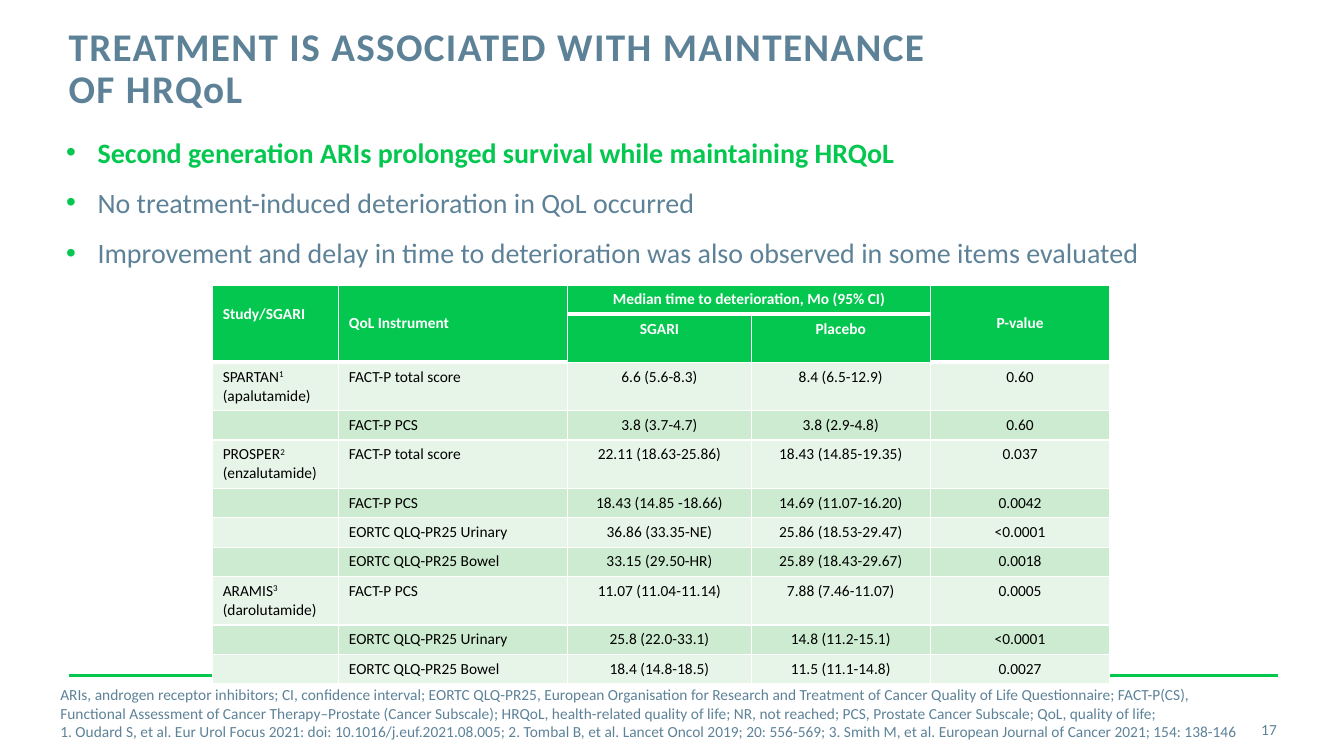
from lxml.etree import SubElement
from pptx import Presentation
from pptx.dml.color import RGBColor
from pptx.enum.shapes import MSO_CONNECTOR
from pptx.enum.text import MSO_ANCHOR, MSO_AUTO_SIZE, PP_ALIGN
from pptx.oxml.ns import qn
from pptx.util import Cm, Pt

COLORS = {
    "green": "03C74F",
    "slate": "5D8298",
    "white": "FFFFFF",
    "black": "000000",
    "light": "E7F5E9",
    "mid": "CCEBD0",
}
TITLE = ["TREATMENT IS ASSOCIATED WITH MAINTENANCE", "OF HRQoL"]
BULLETS = [
    ("Second generation ARIs prolonged survival while maintaining HRQoL", "green", True),
    ("No treatment-induced deterioration in QoL occurred", "slate", False),
    ("Improvement and delay in time to deterioration was also observed in some items evaluated",
     "slate", False),
]
NOTES = [
    "ARIs, androgen receptor inhibitors; CI, confidence interval; EORTC QLQ-PR25, European "
    "Organisation for Research and Treatment of Cancer Quality of Life Questionnaire; FACT-P(CS), "
    "Functional Assessment of Cancer Therapy–Prostate (Cancer Subscale); HRQoL, health-related "
    "quality of life; NR, not reached; PCS, Prostate Cancer Subscale; QoL, quality of life;",
    "1. Oudard S, et al. Eur Urol Focus 2021: doi: 10.1016/j.euf.2021.08.005; 2. Tombal B, et al. "
    "Lancet Oncol 2019; 20: 556-569; 3. Smith M, et al. European Journal of Cancer 2021; "
    "154: 138-146",
]
HEADER = [
    ["Study/SGARI", "QoL Instrument", "Median time to deterioration, Mo (95% CI)", "", "P-value"],
    ["", "", "SGARI", "Placebo", ""],
]
STUDIES = [
    ("SPARTAN", "1", "(apalutamide)", [
        ("FACT-P total score", "6.6 (5.6-8.3)", "8.4 (6.5-12.9)", "0.60"),
        ("FACT-P PCS", "3.8 (3.7-4.7)", "3.8 (2.9-4.8)", "0.60"),
    ]),
    ("PROSPER", "2", "(enzalutamide)", [
        ("FACT-P total score", "22.11 (18.63-25.86)", "18.43 (14.85-19.35)", "0.037"),
        ("FACT-P PCS", "18.43 (14.85 -18.66)", "14.69 (11.07-16.20)", "0.0042"),
        ("EORTC QLQ-PR25 Urinary", "36.86 (33.35-NE)", "25.86 (18.53-29.47)", "<0.0001"),
        ("EORTC QLQ-PR25 Bowel", "33.15 (29.50-HR)", "25.89 (18.43-29.67)", "0.0018"),
    ]),
    ("ARAMIS", "3", "(darolutamide)", [
        ("FACT-P PCS", "11.07 (11.04-11.14)", "7.88 (7.46-11.07)", "0.0005"),
        ("EORTC QLQ-PR25 Urinary", "25.8 (22.0-33.1)", "14.8 (11.2-15.1)", "<0.0001"),
        ("EORTC QLQ-PR25 Bowel", "18.4 (14.8-18.5)", "11.5 (11.1-14.8)", "0.0027"),
    ]),
]
COL_WIDTHS = [3.18, 5.77, 4.62, 4.52, 4.52]
ROW_HEIGHT, STUDY_ROW_HEIGHT, SUBHEAD_HEIGHT = 0.74, 1.22, 1.2


def set_all(target, **values):
    for name, value in values.items():
        setattr(target, name, value)


def rgb(name):
    return RGBColor.from_string(COLORS[name])


def add_run(p, text, size, color, bold=False):
    r = p.add_run()
    r.text = text
    set_all(r.font, name="Calibri", size=Pt(size), bold=bold)
    r.font.color.rgb = rgb(color)
    return r


def place(sp, left, top, width, height):
    set_all(sp, left=Cm(left), top=Cm(top), width=Cm(width), height=Cm(height))


def set_frame(tf, anchor, margin=0):
    set_all(tf, word_wrap=True, auto_size=MSO_AUTO_SIZE.NONE, vertical_anchor=anchor,
            margin_left=margin, margin_right=margin, margin_top=margin // 2,
            margin_bottom=margin // 2)


def next_paragraph(tf, i):
    return tf.add_paragraph() if i else tf.paragraphs[0]


def add_text(s, box, anchor=MSO_ANCHOR.MIDDLE, margin=0):
    tf = s.shapes.add_textbox(*map(Cm, box)).text_frame
    set_frame(tf, anchor, margin)
    return tf


def add_title(s):
    sp = s.shapes.title
    place(sp, 1.73, 0.69, 24.28, 2.24)
    set_frame(sp.text_frame, MSO_ANCHOR.TOP)
    p = sp.text_frame.paragraphs[0]
    set_all(p, alignment=PP_ALIGN.LEFT, line_spacing=Pt(30))
    for i, line in enumerate(TITLE):
        if i:
            p.add_line_break()
        r = add_run(p, line, 28, "slate", True)
        r.font._element.set("spc", "100")


def add_rule(s):
    line = s.shapes.add_connector(MSO_CONNECTOR.STRAIGHT, Cm(1.73), Cm(17.02), Cm(32.21), Cm(17.02))
    line.line.color.rgb = rgb("green")
    line.line.width = Pt(2)
    SubElement(line._element.spPr, qn("a:effectLst"))


def add_bullets(s):
    tf = add_text(s, (1.42, 3.28, 30.45, 3.35), MSO_ANCHOR.TOP, Cm(0.25))
    for i, (text, color, bold) in enumerate(BULLETS):
        p = next_paragraph(tf, i)
        p.space_before = Pt(12 if i else 0)
        pPr = p._p.get_or_add_pPr()
        pPr.set("marL", str(Cm(0.79)))
        pPr.set("indent", str(-Cm(0.79)))
        SubElement(SubElement(pPr, qn("a:buClr")), qn("a:srgbClr"), val=COLORS["green"])
        SubElement(pPr, qn("a:buFont"), typeface="Arial")
        SubElement(pPr, qn("a:buChar"), char="•")
        add_run(p, text, 20, color, bold)


def add_notes_and_number(s):
    tf = add_text(s, (1.52, 17.07, 30.02, 1.8))
    for i, text in enumerate(NOTES):
        add_run(next_paragraph(tf, i), text, 11, "slate")
    p = add_text(s, (30, 17.86, 2.18, 1.02)).paragraphs[0]
    p.alignment = PP_ALIGN.RIGHT
    add_run(p, "17", 11, "slate")


def style_cell(cell, fill, bottom=1):
    tcPr = cell._tc.get_or_add_tcPr()
    for side, width in (("L", 1), ("R", 1), ("T", 1), ("B", bottom)):
        ln = SubElement(tcPr, qn("a:ln" + side), w=str(Pt(width)))
        SubElement(SubElement(ln, qn("a:solidFill")), qn("a:srgbClr"), val=COLORS["white"])
    cell.fill.solid()
    cell.fill.fore_color.rgb = rgb(fill)


def fill_cell(cell, text, color, bold, centred):
    p = cell.text_frame.paragraphs[0]
    if centred:
        p.alignment = PP_ALIGN.CENTER
    if text:
        add_run(p, text, 11, color, bold)
    else:
        SubElement(p._p, qn("a:endParaRPr"), sz="1100")


def add_header(table):
    for row, labels in enumerate(HEADER):
        for col, text in enumerate(labels):
            cell = table.cell(row, col)
            style_cell(cell, "green", 1 if row and text else 3)
            fill_cell(cell, text, "white", True, col > 1)
    for col in (0, 1, 4):
        table.cell(0, col).merge(table.cell(1, col))
        table.cell(0, col).vertical_anchor = MSO_ANCHOR.MIDDLE
    table.cell(0, 2).merge(table.cell(0, 3))
    table.cell(0, 0).margin_bottom = Cm(0.6)


def add_study_name(cell, name, ref, drug):
    tf = cell.text_frame
    p = tf.paragraphs[0]
    add_run(p, name, 11, "black")
    add_run(p, ref, 11, "black").font._element.set("baseline", "30000")
    add_run(tf.add_paragraph(), drug, 11, "black")


def add_results_table(s):
    count = len(HEADER) + sum(len(study[3]) for study in STUDIES)
    table = s.shapes.add_table(count, len(COL_WIDTHS), Cm(5.36), Cm(7.18), Cm(sum(COL_WIDTHS)),
                               Cm(10)).table
    set_all(table, first_row=False, horz_banding=False)
    for col, width in zip(table.columns, COL_WIDTHS):
        col.width = Cm(width)
    for row in table.rows:
        row.height = Cm(ROW_HEIGHT)
    table.rows[1].height = Cm(SUBHEAD_HEIGHT)
    add_header(table)
    row = len(HEADER)
    for name, ref, drug, results in STUDIES:
        table.rows[row].height = Cm(STUDY_ROW_HEIGHT)
        for i, values in enumerate(results):
            for col, text in enumerate(("",) + values):
                cell = table.cell(row, col)
                style_cell(cell, "mid" if row % 2 else "light")
                if col == 0 and i == 0:
                    add_study_name(cell, name, ref, drug)
                else:
                    fill_cell(cell, text, "black", False, col > 1)
            row += 1


def main():
    prs = Presentation()
    set_all(prs, slide_width=Cm(33.87), slide_height=Cm(19.05))
    s = prs.slides.add_slide(prs.slide_layouts[5])
    add_rule(s)
    add_title(s)
    add_notes_and_number(s)
    add_bullets(s)
    add_results_table(s)
    prs.save("out.pptx")


if __name__ == "__main__":
    main()
